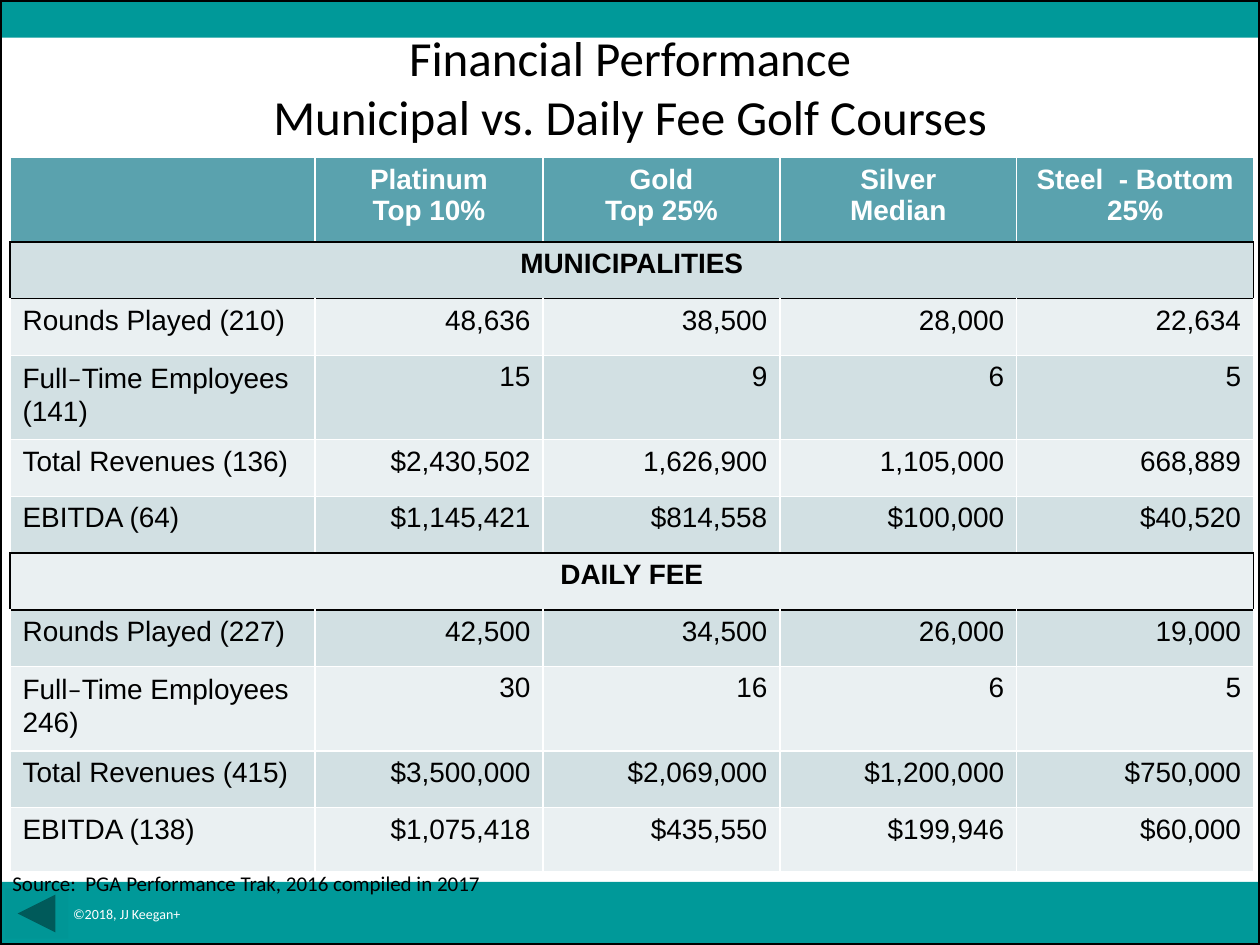
from typing import NamedTuple

from lxml import etree
from pptx import Presentation
from pptx import util as u
from pptx.dml.color import RGBColor
from pptx.enum import shapes, text
from pptx.oxml.ns import qn

TEAL = RGBColor(0x00, 0x99, 0x99)
BUTTON_TEAL = RGBColor(0x00, 0x96, 0x96)
HEADER = RGBColor(0x5A, 0xA2, 0xAE)
BAND_DARK = RGBColor(0xD2, 0xE0, 0xE3)
BAND_LIGHT = RGBColor(0xEA, 0xF0, 0xF2)
BLACK = RGBColor(0, 0, 0)
WHITE = RGBColor(0xFF, 0xFF, 0xFF)

SLIDE_W, SLIDE_H = u.Inches(10), u.Inches(7.5)
LEFT, CENTER, RIGHT = text.PP_ALIGN.LEFT, text.PP_ALIGN.CENTER, text.PP_ALIGN.RIGHT
COLUMN_WIDTHS = (2.42, 1.81, 1.88, 1.88, 1.88)
SINGLE, DOUBLE, LAST = 0.45, 0.67, 0.51
DASH = "‒"


class Area(NamedTuple):
    x: float
    y: float
    w: float
    h: float

    def emu(self) -> tuple:
        return (u.Emu(round(self.x * SLIDE_W)), u.Emu(round(self.y * SLIDE_H)),
                u.Emu(round(self.w * SLIDE_W)), u.Emu(round(self.h * SLIDE_H)))


class Row(NamedTuple):
    cells: tuple
    height: float = SINGLE
    section: bool = False


ROWS = (
    Row(("", "Platinum\nTop 10%", "Gold\nTop 25%", "Silver\nMedian",
         "Steel  - Bottom 25%"), DOUBLE),
    Row(("MUNICIPALITIES",), section=True),
    Row(("Rounds Played (210)", "48,636", "38,500", "28,000", "22,634")),
    Row(("Full‒Time Employees (141)", "15", "9", "6", "5"), DOUBLE),
    Row(("Total Revenues (136)", "$2,430,502", "1,626,900", "1,105,000", "668,889")),
    Row(("EBITDA (64)", "$1,145,421", "$814,558", "$100,000", "$40,520")),
    Row(("DAILY FEE",), section=True),
    Row(("Rounds Played (227)", "42,500", "34,500", "26,000", "19,000")),
    Row(("Full‒Time Employees 246)", "30", "16", "6", "5"), DOUBLE),
    Row(("Total Revenues (415)", "$3,500,000", "$2,069,000", "$1,200,000", "$750,000")),
    Row(("EBITDA (138)", "$1,075,418", "$435,550", "$199,946", "$60,000"), LAST),
)


def write(frame, content: str, *, size: float, font: str = "Calibri",
          color: RGBColor = BLACK, bold: bool = False, align=LEFT) -> None:
    for index, line in enumerate(content.split("\n")):
        paragraph = frame.paragraphs[0] if index == 0 else frame.add_paragraph()
        paragraph.alignment = align
        before, dash, after = line.partition(DASH)
        for part, face in ((before, font), (dash, "Calibri"), (after, font)):
            if part:
                run = paragraph.add_run()
                run.text = part.replace("|", "\v")
                run.font.size, run.font.name = u.Pt(size), face
                run.font.bold, run.font.color.rgb = bold, color
        for line_break in paragraph._p.findall(qn("a:br")):
            etree.SubElement(line_break, qn("a:rPr"), sz=str(size * 100))


def add_block(slide, kind, area: Area, fill=None, line=None):
    block = slide.shapes.add_shape(kind, *area.emu())
    block.shadow.inherit = False
    if fill is None:
        block.fill.background()
    else:
        block.fill.solid()
        block.fill.fore_color.rgb = fill
    if line is None:
        block.line.fill.background()
    else:
        block.line.color.rgb, block.line.width = line, u.Pt(2)
    return block


def set_borders(cell, **edges: RGBColor) -> None:
    properties = cell._tc.get_or_add_tcPr()
    for side in "LRTB":
        edge = etree.SubElement(properties, qn(f"a:ln{side}"), w=str(u.Pt(1)))
        solid = etree.SubElement(edge, qn("a:solidFill"))
        etree.SubElement(solid, qn("a:srgbClr"), val=str(edges.get(side, WHITE)))


def is_section(index: int) -> bool:
    return 0 <= index < len(ROWS) and ROWS[index].section


def add_performance_table(slide, area: Area) -> None:
    table = slide.shapes.add_table(len(ROWS), len(COLUMN_WIDTHS), *area.emu()).table
    for column, width in zip(table.columns, COLUMN_WIDTHS):
        column.width = u.Inches(width)
    for r, row in enumerate(ROWS):
        table.rows[r].height = u.Inches(row.height)
        header = r == 0
        band = HEADER if header else BAND_DARK if r % 2 else BAND_LIGHT
        sides = BLACK if row.section else WHITE
        top = BLACK if row.section or is_section(r - 1) else WHITE
        bottom = BLACK if row.section or is_section(r + 1) else WHITE
        for cell in table.rows[r].cells:
            set_borders(cell, L=sides, R=sides, T=top, B=bottom)
            cell.fill.solid()
            cell.fill.fore_color.rgb = band
        if row.section:
            table.cell(r, 0).merge(table.cell(r, len(COLUMN_WIDTHS) - 1))
        for c, content in enumerate(row.cells):
            heading = header or row.section
            write(table.cell(r, c).text_frame, content, size=16, font="Arial",
                  color=WHITE if header else BLACK, bold=heading,
                  align=CENTER if heading else RIGHT if c else LEFT)


def main() -> None:
    deck = Presentation()
    deck.slide_width, deck.slide_height = SLIDE_W, SLIDE_H
    slide = deck.slides.add_slide(deck.slide_layouts[5])
    kinds = shapes.MSO_SHAPE

    footer = add_block(slide, kinds.RECTANGLE, Area(0, 14 / 15, 1, 1 / 15), TEAL)
    footer.text_frame.margin_left = u.Inches(0.58)
    footer.text_frame.vertical_anchor = text.MSO_ANCHOR.MIDDLE
    write(footer.text_frame, "©2018, JJ Keegan+", size=8, color=WHITE)
    add_block(slide, kinds.RECTANGLE, Area(0, 0, 1, 0.04), TEAL)
    add_block(slide, kinds.RECTANGLE, Area(0, 0, 1, 1), line=BLACK)
    add_block(slide, kinds.ACTION_BUTTON_BACK_OR_PREVIOUS,
              Area(0.004, 0.94, 0.05, 0.4 / 7.5), BUTTON_TEAL)

    add_performance_table(slide, Area(0.008, 1 / 6, 0.987, 5.67 / 7.5))

    title = slide.shapes.title
    title.left, title.top, title.width, title.height = Area(
        0, 0.17 / 7.5, 1, 1.42 / 7.5).emu()
    title.text_frame.vertical_anchor = text.MSO_ANCHOR.TOP
    title.text_frame.auto_size = text.MSO_AUTO_SIZE.NONE
    write(title.text_frame, "Financial Performance\nMunicipal vs. Daily Fee Golf Courses",
          size=28, align=CENTER)
    title._element.getparent().append(title._element)

    source = slide.shapes.add_textbox(*Area(0, 6.86 / 7.5, 0.397, 0.04).emu())
    source.text_frame.word_wrap = False
    source.text_frame.auto_size = text.MSO_AUTO_SIZE.SHAPE_TO_FIT_TEXT
    write(source.text_frame, "Source:  PGA Performance Trak, 2016 compiled in 2017", size=12)

    deck.save("out.pptx")


if __name__ == "__main__":
    main()
